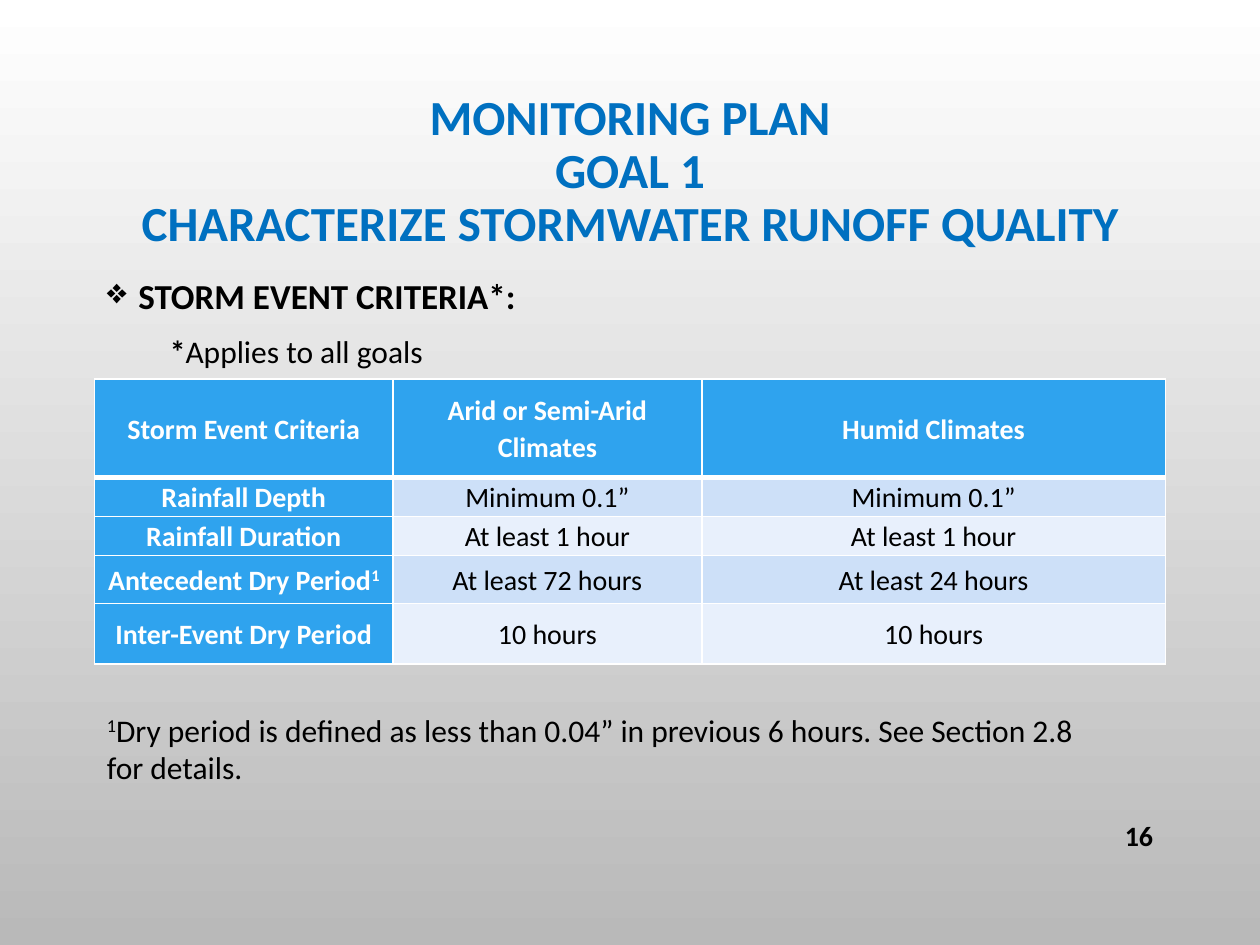
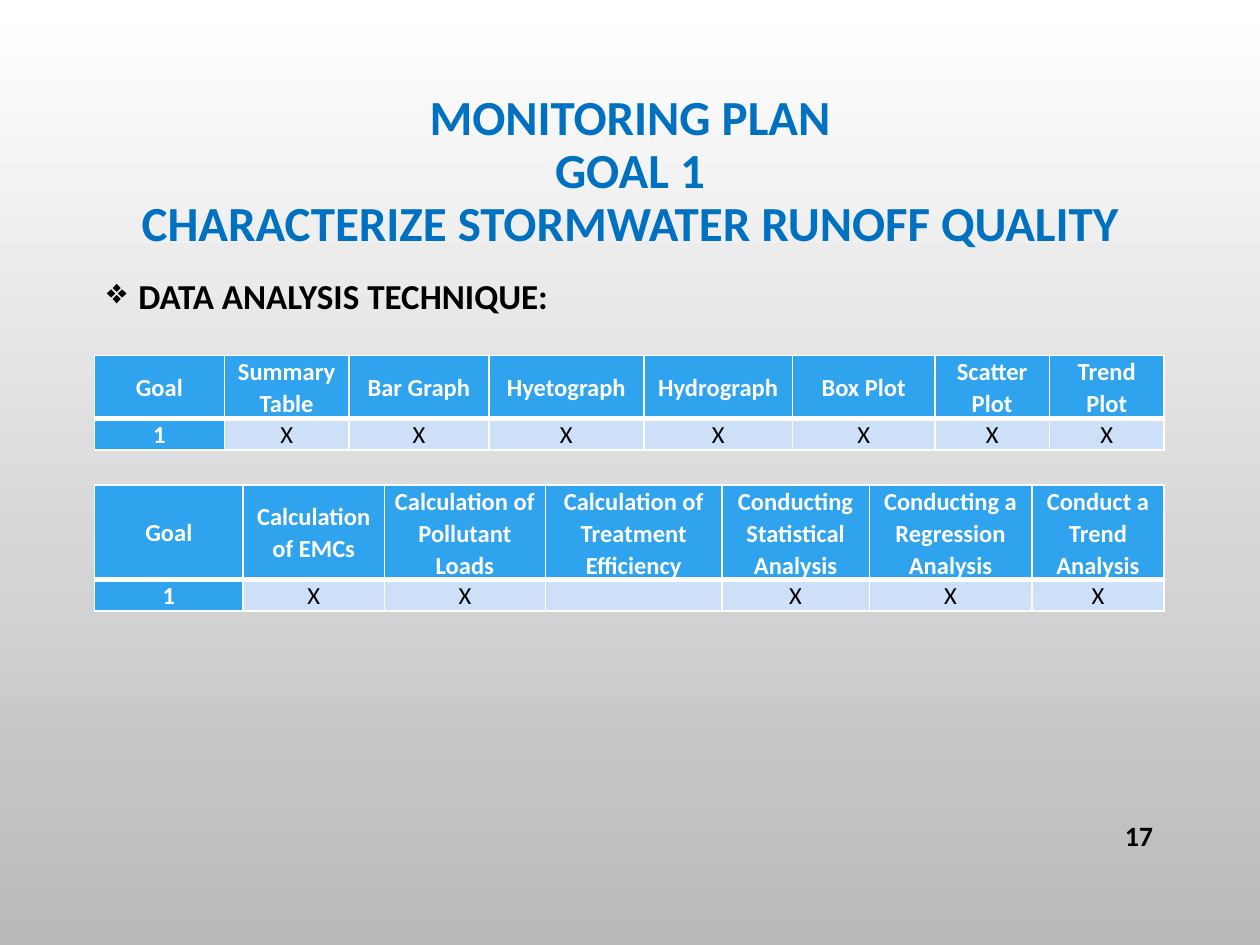
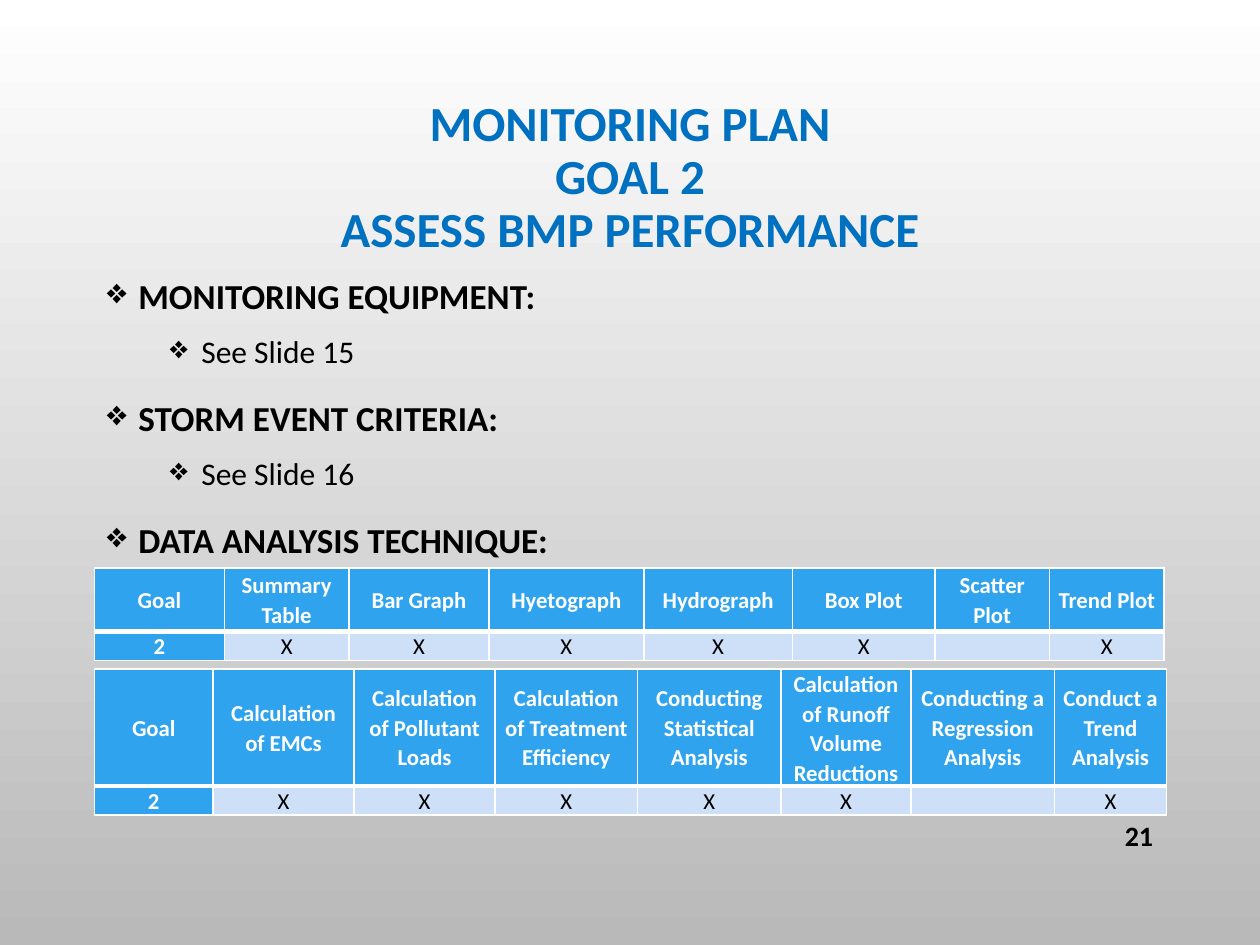
from lxml.etree import SubElement
from pptx import Presentation
from pptx.dml.color import RGBColor as Rgb
from pptx.enum.text import MSO_ANCHOR as Anchor, PP_ALIGN as Align
from pptx.oxml.ns import qn
from pptx.util import Inches, Pt

FONT = "Calibri"
COLORS = {"title": "0070C0", "text": "000000", "light": "FFFFFF", "shade": "B9B9B9",
          "header": "2FA3EE", "band_dark": "CDE0F8", "band_light": "E8F0FC"}
LEFT, WIDTH = 0.75, 8.5


def style_runs(para, size, color="text", bold=False):
    for span in para.runs:
        span.font.name = FONT
        span.font.size = Pt(size)
        span.font.bold = bold
        span.font.color.rgb = Rgb.from_string(COLORS[color])


def add_grid(page, top, widths, heights, rows, size):
    frame = page.shapes.add_table(len(rows), len(widths), Inches(LEFT), Inches(top),
                                  Inches(WIDTH), Inches(sum(heights)))
    table = frame.table
    for column, width in zip(table.columns, widths):
        column.width = Inches(width)
    for r, texts in enumerate(rows):
        table.rows[r].height = Inches(heights[r])
        for c, text in enumerate(texts):
            cell = table.cell(r, c)
            is_header = r == 0 or c == 0
            cell.margin_left = cell.margin_right = Inches(0.07)
            cell.margin_top = cell.margin_bottom = 0
            cell.vertical_anchor = Anchor.MIDDLE
            # Borders: thin white, with a thick rule under the header row
            cell_props = cell._tc.get_or_add_tcPr()
            for side in ("L", "R", "T", "B"):
                thick = (r, side) in ((0, "B"), (1, "T"))
                line = SubElement(cell_props, qn(f"a:ln{side}"), w=str(Pt(3 if thick else 1)))
                line_fill = SubElement(line, qn("a:solidFill"))
                SubElement(line_fill, qn("a:srgbClr"), val=COLORS["light"])
            fill = "header" if is_header else "band_dark" if r % 2 else "band_light"
            cell.fill.solid()
            cell.fill.fore_color.rgb = Rgb.from_string(COLORS[fill])
            # Cell text
            para = cell.text_frame.paragraphs[0]
            para.alignment = Align.CENTER
            para.line_spacing = 1.07
            if r and c == 0:
                para.space_after = Pt(6)
            if text:
                para.text = text
                style_runs(para, size, "light" if is_header else "text", is_header)
            else:
                para._p.get_or_add_endParaRPr().set("sz", str(size * 100))
    return table


# Content of the pages
GOAL_1 = "MONITORING PLAN\nGOAL 1\nCHARACTERIZE STORMWATER RUNOFF QUALITY"
GOAL_2 = "MONITORING PLAN\nGOAL 2\nASSESS BMP PERFORMANCE"
PAGES = [
    (16, GOAL_1, 1.38, [(0, "STORM EVENT CRITERIA*:"), (1, "*Applies to all goals")]),
    (17, GOAL_1, 1.38, [(0, "DATA ANALYSIS TECHNIQUE:")]),
    (21, GOAL_2, 1.47, [(0, "MONITORING EQUIPMENT:"), (1, "See Slide 15"),
                        (0, "STORM EVENT CRITERIA:"), (1, "See Slide 16"),
                        (0, "DATA ANALYSIS TECHNIQUE:")]),
]
STORM_ROWS = [
    ["Storm Event Criteria", "Arid or Semi-Arid Climates", "Humid Climates"],
    ["Rainfall Depth", "Minimum 0.1”", "Minimum 0.1”"],
    ["Rainfall Duration", "At least 1 hour", "At least 1 hour"],
    ["Antecedent Dry Period", "At least 72 hours", "At least 24 hours"],
    ["Inter-Event Dry Period", "10 hours", "10 hours"],
]
PLOTS = ["Goal", "Summary Table", "Bar Graph", "Hyetograph", "Hydrograph", "Box Plot",
         "Scatter Plot", "Trend Plot"]
PLOT_WIDTHS = [1.03, 0.99, 1.11, 1.23, 1.18, 1.13, 0.91, 0.91]
METHODS = ["Goal", "Calculation of EMCs", "Calculation of Pollutant Loads",
           "Calculation of Treatment Efficiency", "Conducting Statistical Analysis",
           "Conducting a Regression Analysis", "Conduct a Trend Analysis"]
RUNOFF_METHODS = METHODS[:5] + ["Calculation of Runoff Volume Reductions"] + METHODS[5:]

# Deck and shared background
deck = Presentation()
deck.slide_width, deck.slide_height = Inches(10), Inches(7.5)
backdrop = deck.slide_master.background.fill
backdrop.gradient()
backdrop.gradient_angle = 270
for stop, color in zip(backdrop.gradient_stops, ("light", "shade")):
    stop.color.rgb = Rgb.from_string(COLORS[color])

# Title, bullets and page number of every page
pages = []
for number, title, title_height, bullets in PAGES:
    page = deck.slides.add_slide(deck.slide_layouts[6])
    pages.append(page)

    title_box = page.shapes.add_textbox(Inches(LEFT), Inches(0.68), Inches(WIDTH),
                                        Inches(title_height))
    title_box.text_frame.word_wrap = True
    title_box.text_frame.vertical_anchor = Anchor.MIDDLE
    para = title_box.text_frame.paragraphs[0]
    para.text = title
    para.alignment = Align.CENTER
    para.line_spacing = 0.9
    style_runs(para, 28, "title", True)

    body_box = page.shapes.add_textbox(Inches(LEFT), Inches(2.06), Inches(WIDTH), Inches(4.28))
    body = body_box.text_frame
    body.word_wrap = True
    for i, (level, text) in enumerate(bullets):
        para = body.add_paragraph() if i else body.paragraphs[0]
        para.level = level
        is_note = text.startswith("*")
        props = para._p.get_or_add_pPr()
        props.set("marL", str(Inches(0.5 if is_note else 0.25 + 0.5 * level)))
        props.set("indent", str(Inches(0 if is_note else -0.25)))
        if is_note:
            para.add_run().text = "*"
            para.add_run().text = text[1:]
        else:
            bullet_color = SubElement(props, qn("a:buClr"))
            SubElement(bullet_color, qn("a:srgbClr"), val=COLORS["text"])
            SubElement(props, qn("a:buChar"), char="❖")
            para.text = text
        para.line_spacing = 1.2
        if i:
            para.space_before = Pt(5 if level else 10)
        style_runs(para, 18 if level else 20, bold=level == 0)
        if is_note:
            para.runs[0].font.bold = True

    number_box = page.shapes.add_textbox(Inches(8.62), Inches(6.43), Inches(0.63), Inches(0.4))
    number_box.text_frame.word_wrap = True
    number_box.text_frame.vertical_anchor = Anchor.MIDDLE
    para = number_box.text_frame.paragraphs[0]
    para.text = str(number)
    para.alignment = Align.RIGHT
    style_runs(para, 16, bold=True)

storm_page, goal_1_page, goal_2_page = pages

# Storm event criteria with a footnote
storm_table = add_grid(storm_page, 3.01, [2.37, 2.45, 3.68], [0.78, 0.31, 0.31, 0.38, 0.48],
                       STORM_ROWS, 16)
dry_period = storm_table.cell(3, 0).text_frame.paragraphs[0]
dry_period.add_run().text = "1"
style_runs(dry_period, 16, "light", True)

note_box = storm_page.shapes.add_textbox(Inches(LEFT), Inches(5.59), Inches(7.87), Inches(1.01))
note_box.text_frame.word_wrap = True
footnote = note_box.text_frame.paragraphs[0]
footnote.add_run().text = "1"
footnote.add_run().text = ("Dry period is defined as less than 0.04” in previous 6 hours. "
                           "See Section 2.8 for details.")
style_runs(footnote, 18)
for mark in (dry_period.runs[-1], footnote.runs[0]):
    mark._r.get_or_add_rPr().set("baseline", "30000")

# Data analysis techniques for each goal
add_grid(goal_1_page, 2.82, PLOT_WIDTHS, [0.5, 0.2], [PLOTS, ["1"] + ["X"] * 7], 14)
add_grid(goal_1_page, 3.85, [1.18, 1.12, 1.28, 1.4, 1.17, 1.29, 1.05], [0.59, 0.2],
         [METHODS, ["1", "X", "X", "", "X", "X", "X"]], 14)
add_grid(goal_2_page, 4.51, PLOT_WIDTHS, [0.5, 0.2],
         [PLOTS, ["2"] + ["X"] * 5 + ["", "X"]], 13)
add_grid(goal_2_page, 5.31, [0.94, 1.12, 1.12, 1.13, 1.14, 1.03, 1.14, 0.89], [0.78, 0.2],
         [RUNOFF_METHODS, ["2"] + ["X"] * 5 + ["", "X"]], 13)

deck.save("out.pptx")
